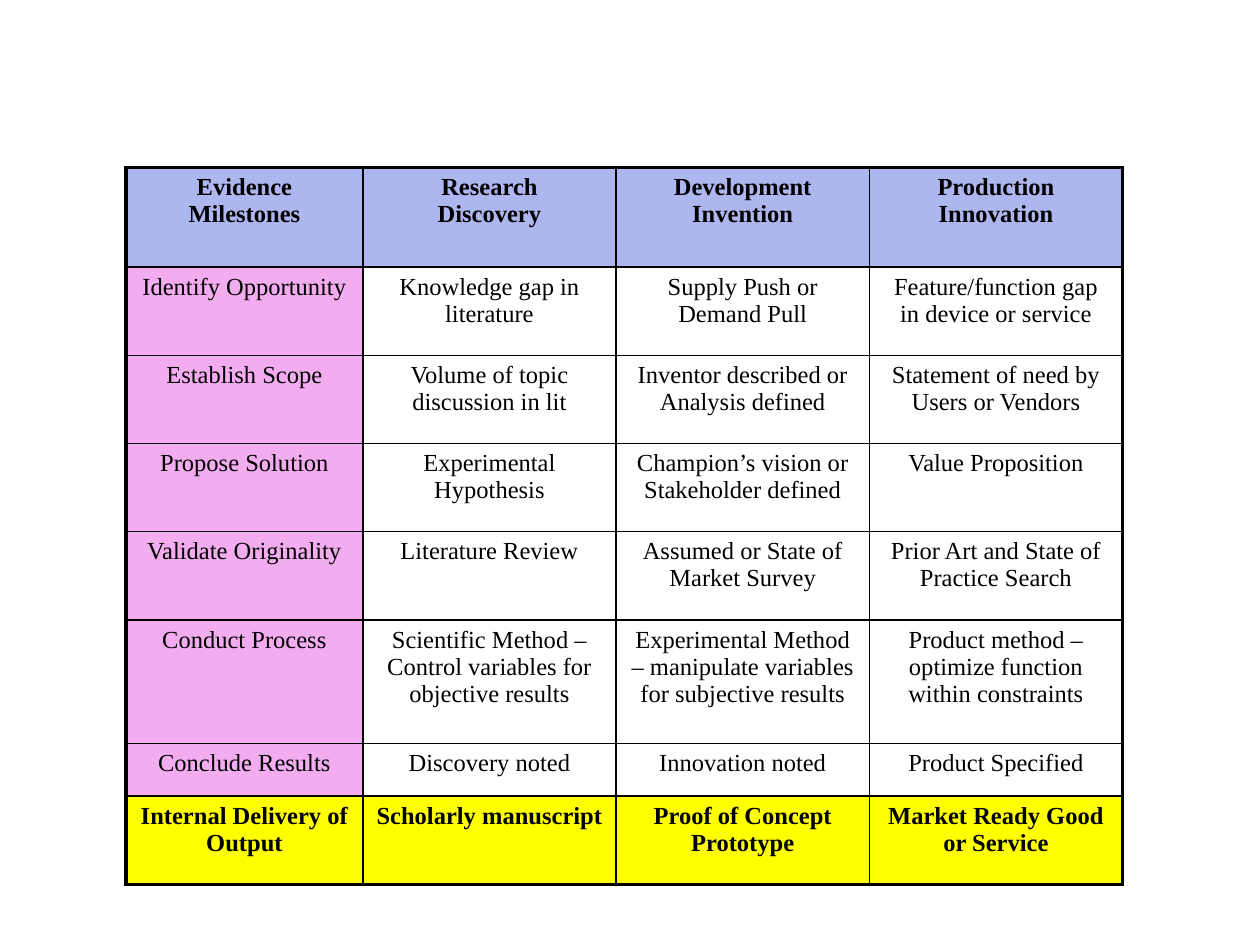
from lxml.etree import SubElement
from pptx import Presentation
from pptx.dml.color import RGBColor
from pptx.enum.text import PP_ALIGN
from pptx.oxml.ns import qn
from pptx.util import Inches, Pt

COLORS = {"ink": "000000", "head": "AEB6F0", "step": "F2ACEF", "output": "FFFF00"}
FONT = "Times New Roman"
WIDTHS = [1.88, 2.01, 2.01, 2.01]
HEIGHTS = [0.79, 0.7, 0.7, 0.7, 0.7, 0.98, 0.42, 0.7]
ROWS = [
    ["Evidence\nMilestones", "Research\nDiscovery",
     "Development Invention", "Production Innovation"],
    ["Identify Opportunity", "Knowledge gap in literature",
     "Supply Push or Demand Pull", "Feature/function gap in device or service"],
    ["Establish Scope", "Volume of topic discussion in lit",
     "Inventor described or Analysis defined", "Statement of need by Users or Vendors"],
    ["Propose Solution", "Experimental Hypothesis",
     "Champion’s vision or Stakeholder defined", "Value Proposition"],
    ["Validate Originality", "Literature Review",
     "Assumed or State of Market Survey", "Prior Art and State of Practice Search"],
    ["Conduct Process", "Scientific Method – Control variables for objective results",
     "Experimental Method – manipulate variables for subjective results",
     "Product method – optimize function within constraints"],
    ["Conclude Results", "Discovery noted", "Innovation noted", "Product Specified"],
    ["Internal Delivery of Output", "Scholarly manuscript",
     "Proof of Concept Prototype", "Market Ready Good or Service"],
]


def add_border(cell, side, points):
    line = SubElement(cell._tc.get_or_add_tcPr(), qn(f"a:ln{side}"), w=str(Pt(points)))
    fill = SubElement(line, qn("a:solidFill"))
    SubElement(fill, qn("a:srgbClr"), val=COLORS["ink"])


deck = Presentation()
deck.slide_width, deck.slide_height = Inches(10), Inches(7.5)
slide = deck.slides.add_slide(deck.slide_layouts[6])

last_row, last_col = len(ROWS) - 1, len(WIDTHS) - 1
table = slide.shapes.add_table(len(ROWS), len(WIDTHS), Inches(1), Inches(1.33),
                               Inches(sum(WIDTHS)), Inches(sum(HEIGHTS))).table
for col, width in zip(table.columns, WIDTHS):
    col.width = Inches(width)
for row, height in zip(table.rows, HEIGHTS):
    row.height = Inches(height)

for r, texts in enumerate(ROWS):
    for c, text in enumerate(texts):
        cell = table.cell(r, c)
        # Outer edges are thicker; borders must come before the fill
        edges = {"L": c == 0, "R": c == last_col, "T": r == 0, "B": r == last_row}
        for side, outer in edges.items():
            add_border(cell, side, 2 if outer else 1)

        if r == 0:
            shade = "head"
        elif r == last_row:
            shade = "output"
        else:
            shade = "step" if c == 0 else None
        if shade:
            cell.fill.solid()
            cell.fill.fore_color.rgb = RGBColor.from_string(COLORS[shade])
        else:
            cell.fill.background()

        frame = cell.text_frame
        for i, part in enumerate(text.split("\n")):
            para = frame.add_paragraph() if i else frame.paragraphs[0]
            para.alignment = PP_ALIGN.CENTER
            run = para.add_run()
            run.text = part
            run.font.name = FONT
            run.font.size = Pt(14)
            run.font.bold = r in (0, last_row)
            run.font.color.rgb = RGBColor.from_string(COLORS["ink"])

deck.save("out.pptx")
